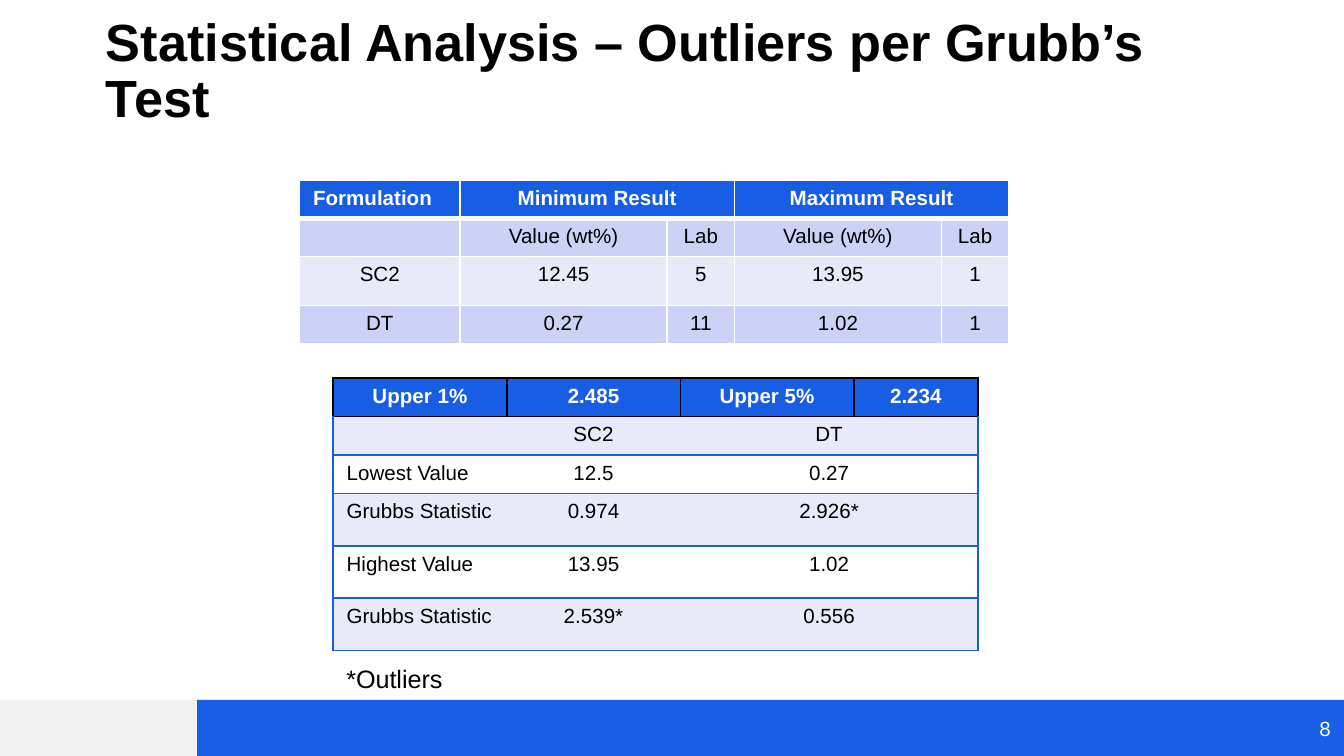
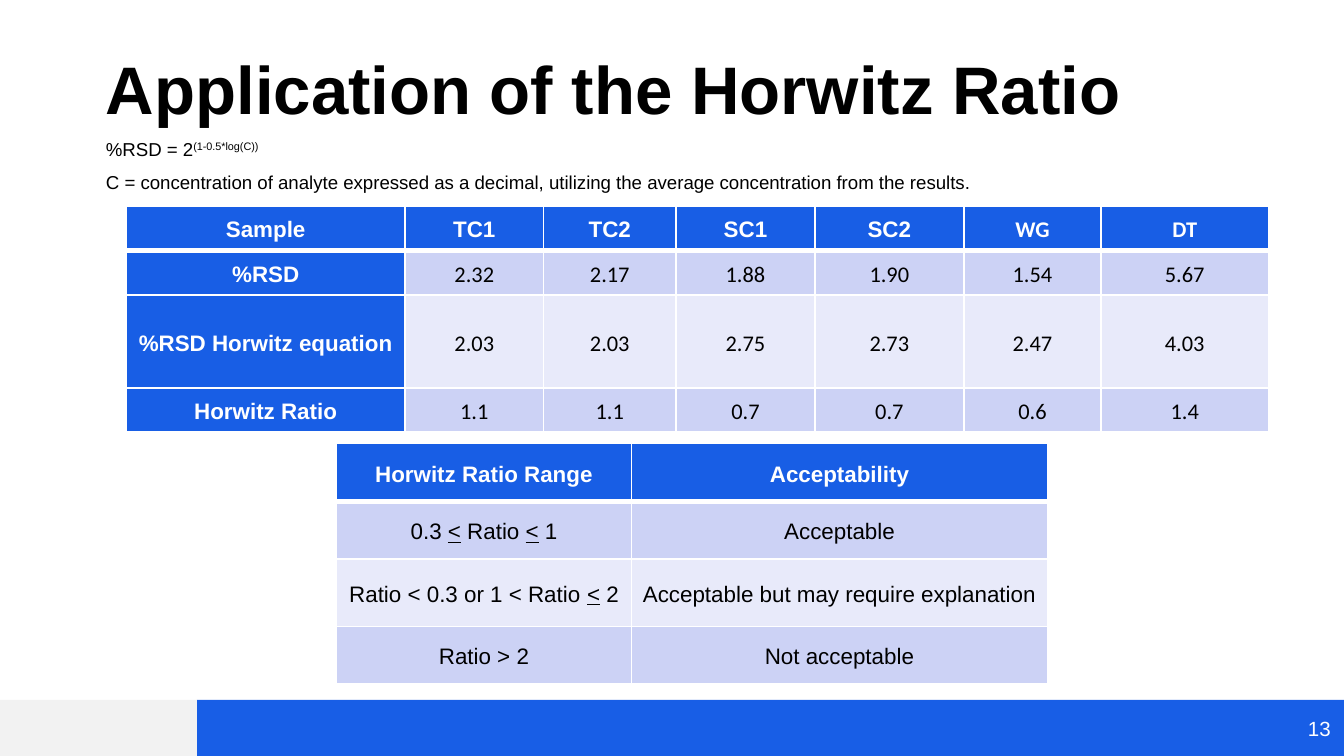
from lxml.etree import SubElement
from pptx import Presentation
from pptx.dml.color import RGBColor
from pptx.enum.shapes import MSO_SHAPE
from pptx.enum.text import MSO_ANCHOR, PP_ALIGN
from pptx.oxml import parse_xml
from pptx.oxml.ns import nsdecls, qn
from pptx.util import Pt

COLORS = {
    "band": "185EE6", "header": "185EE5", "gray": "F2F2F2", "white": "FFFFFF",
    "black": "000000", "dark_row": "CCD2F5", "light_row": "E8EAFA",
}
UNDERLINE = {"u": "sng"}
SUPERSCRIPT = {"baseline": "30000"}
LEFT, CENTER, RIGHT = PP_ALIGN.LEFT, PP_ALIGN.CENTER, PP_ALIGN.RIGHT
SIDES = ("L", "R", "T", "B")

# A None cell is joined to the cell on its left; text between bars is accented.
EXTREME_RESULTS = {
    "at": (160.5, 96.5),
    "columns": [86, 111, 36, 111, 36],
    "row_heights": [20.4, 20.4, 26.4, 20.4],
    "rows": [
        ["Formulation", "Minimum Result", None, "Maximum Result", None],
        ["", "Value (wt%)", "Lab", "Value (wt%)", "Lab"],
        ["SC2", "12.45", "5", "13.95", "1"],
        ["DT", "0.27", "11", "1.02", "1"],
    ],
    "left_cells": [(0, 0)],
}
GRUBBS_STATISTICS = {
    "at": (178.5, 202.4),
    "columns": [93, 93, 93, 66.5],
    "row_heights": [20.7] * 3 + [28] * 3,
    "rows": [
        ["Upper 1%", "2.485", "Upper 5%", "2.234"],
        ["", "SC2", "DT", None],
        ["Lowest Value", "12.5", "0.27", None],
        ["Grubbs Statistic", "0.974", "2.926*", None],
        ["Highest Value", "13.95", "1.02", None],
        ["Grubbs Statistic", "2.539*", "0.556", None],
    ],
    "left_cells": [(row, 0) for row in range(2, 6)],
    "row_fills": ("light_row", "white"),
    "outlined": True,
}
ROOMY = {"size": 12, "line_spacing": 1.15, "roomy": True}
HORWITZ_RATIOS = {
    "at": (67.6, 110.4),
    "columns": [149.5, 74, 71.2, 74.2, 80, 73.4, 89.7],
    "row_heights": [23.8, 23.8, 49.8, 23.8],
    "rows": [
        ["Sample", "TC1", "TC2", "SC1", "SC2", "WG", "DT"],
        ["%RSD", "2.32", "2.17", "1.88", "1.90", "1.54", "5.67"],
        ["%RSD Horwitz equation", "2.03", "2.03", "2.75", "2.73", "2.47", "4.03"],
        ["Horwitz Ratio", "1.1", "1.1", "0.7", "0.7", "0.6", "1.4"],
    ],
    "header_column": True,
    "calibri_cells": [(0, 5), (0, 6)]
    + [(row, column) for row in range(1, 4) for column in range(1, 7)],
    **ROOMY,
}
ACCEPTABILITY = {
    "at": (180.3, 237.6),
    "columns": [158, 223],
    "row_heights": [31, 31, 36, 31],
    "rows": [
        ["Horwitz Ratio Range", "Acceptability"],
        ["0.3 |<| Ratio |<| 1", "Acceptable"],
        ["Ratio < 0.3 or 1 < Ratio |<| 2", "Acceptable but may require explanation"],
        ["Ratio > 2", "Not acceptable"],
    ],
    **ROOMY,
}
HORWITZ_EQUATION = [
    "%RSD = 2|(1-0.5*log(C))|",
    "C = concentration of analyte expressed as a decimal, "
    "utilizing the average concentration from the results.",
]
SLIDES = [
    {
        "title": "Statistical Analysis – Outliers per Grubb’s Test",
        "title_size": 28,
        "number": "8",
        "tables": [EXTREME_RESULTS, GRUBBS_STATISTICS],
        "texts": [{"box": (178.5, 352, 67, 24), "lines": ["*Outliers"],
                   "size": 13.5, "wrap": False}],
    },
    {
        "title": "Application of the Horwitz Ratio",
        "title_size": 36,
        "number": "13",
        "tables": [HORWITZ_RATIOS, ACCEPTABILITY],
        "texts": [{"box": (49.7, 73.4, 620.6, 34.6), "lines": HORWITZ_EQUATION,
                   "size": 10, "line_spacing": 0.7, "gap": 9.5}],
    },
]


def color(name):
    return RGBColor.from_string(COLORS[name])


def write(paragraph, text, size, color_name="black", bold=False, font="Arial",
          alignment=LEFT, line_spacing=None, accent=UNDERLINE):
    """Fill a paragraph, giving the parts between bars the accent."""
    paragraph.alignment = alignment
    paragraph.line_spacing = line_spacing
    if not text:
        SubElement(paragraph._p, qn("a:endParaRPr"), sz=str(int(size * 100)))
        return
    for index, part in enumerate(text.split("|")):
        if not part:
            continue
        run = paragraph.add_run()
        run.text = part
        for name, value in {"size": Pt(size), "bold": bold, "name": font}.items():
            setattr(run.font, name, value)
        run.font.color.rgb = color(color_name)
        if index % 2:
            for name, value in accent.items():
                run._r.get_or_add_rPr().set(name, value)


def add_text(slide, box, lines, size, anchor=MSO_ANCHOR.TOP, wrap=True, gap=0, **style):
    frame = slide.shapes.add_textbox(*map(Pt, box)).text_frame
    frame.word_wrap = wrap
    frame.vertical_anchor = anchor
    for index, line in enumerate(lines):
        paragraph = frame.add_paragraph() if index else frame.paragraphs[0]
        if index:
            paragraph.space_before = Pt(gap)
        write(paragraph, line, size, accent=SUPERSCRIPT, **style)


def set_borders(cell, borders):
    """Draw each side from a (colour, width) pair, or no line for None."""
    properties = cell._tc.get_or_add_tcPr()
    for index, side in enumerate(SIDES):
        color_name, width = borders[side] or (None, 0)
        paint = (f'<a:solidFill><a:srgbClr val="{COLORS[color_name]}"/></a:solidFill>'
                 if color_name else "<a:noFill/>")
        properties.insert(index, parse_xml(
            f'<a:ln{side} {nsdecls("a")} w="{Pt(width)}">{paint}</a:ln{side}>'))


def borders_for(row, column, last_column, outlined):
    if not outlined:
        borders = dict.fromkeys(SIDES, ("white", 1))
        if row < 2:
            borders["T" if row else "B"] = ("white", 3)
        return borders
    if row == 0:
        return dict.fromkeys(SIDES, ("black", 1))
    edge = ("header", 1)
    return {
        "L": edge if column == 0 else None,
        "R": edge if column >= last_column - 1 else None,
        "T": ("black", 1) if row == 1 else edge,
        "B": edge,
    }


def add_table(slide, at, columns, row_heights, rows, size=11, line_spacing=None,
              left_cells=(), calibri_cells=(), row_fills=("dark_row", "light_row"),
              header_column=False, outlined=False, roomy=False):
    extent = (sum(columns), sum(row_heights))
    table = slide.shapes.add_table(
        len(rows), len(columns), *map(Pt, at + extent)).table
    for column, width in zip(table.columns, columns):
        column.width = Pt(width)
    for row, height in zip(table.rows, row_heights):
        row.height = Pt(height)
    for r, texts in enumerate(rows):
        for c, text in enumerate(texts):
            cell = table.cell(r, c)
            is_header = r == 0 or (header_column and c == 0)
            cell.fill.solid()
            cell.fill.fore_color.rgb = color(
                "header" if is_header else row_fills[(r - 1) % 2])
            set_borders(cell, borders_for(r, c, len(columns) - 1, outlined))
            if roomy:
                cell.vertical_anchor = MSO_ANCHOR.MIDDLE
                cell.margin_left = cell.margin_right = Pt(5)
                cell.margin_top = cell.margin_bottom = 0
            if text is None:
                table.cell(r, c - 1).merge(cell)
                continue
            write(cell.text_frame.paragraphs[0], text, size,
                  color_name="white" if is_header else "black", bold=is_header,
                  font="Calibri" if (r, c) in calibri_cells else "Arial",
                  alignment=LEFT if (r, c) in left_cells else CENTER,
                  line_spacing=line_spacing)


def add_band(slide, box, color_name):
    band = slide.shapes.add_shape(MSO_SHAPE.RECTANGLE, *map(Pt, box))
    band.shadow.inherit = False
    band.fill.solid()
    band.fill.fore_color.rgb = color(color_name)
    band.line.fill.background()


def add_slide(presentation, content):
    slide = presentation.slides.add_slide(presentation.slide_layouts[6])
    add_band(slide, (105.5, 375, 614.5, 30), "band")
    add_band(slide, (0, 375, 105.5, 30), "gray")
    add_text(slide, (49.7, 13.7, 620.6, 59), [content["title"]], content["title_size"],
             anchor=MSO_ANCHOR.BOTTOM, bold=True, line_spacing=0.9)
    add_text(slide, (680, 375, 40, 30), [content["number"]], 11,
             anchor=MSO_ANCHOR.MIDDLE, color_name="white", alignment=RIGHT)
    for text in content["texts"]:
        add_text(slide, **text)
    for table in content["tables"]:
        add_table(slide, **table)


def main():
    presentation = Presentation()
    presentation.slide_width, presentation.slide_height = Pt(720), Pt(405)
    for content in SLIDES:
        add_slide(presentation, content)
    presentation.save("out.pptx")


if __name__ == "__main__":
    main()
